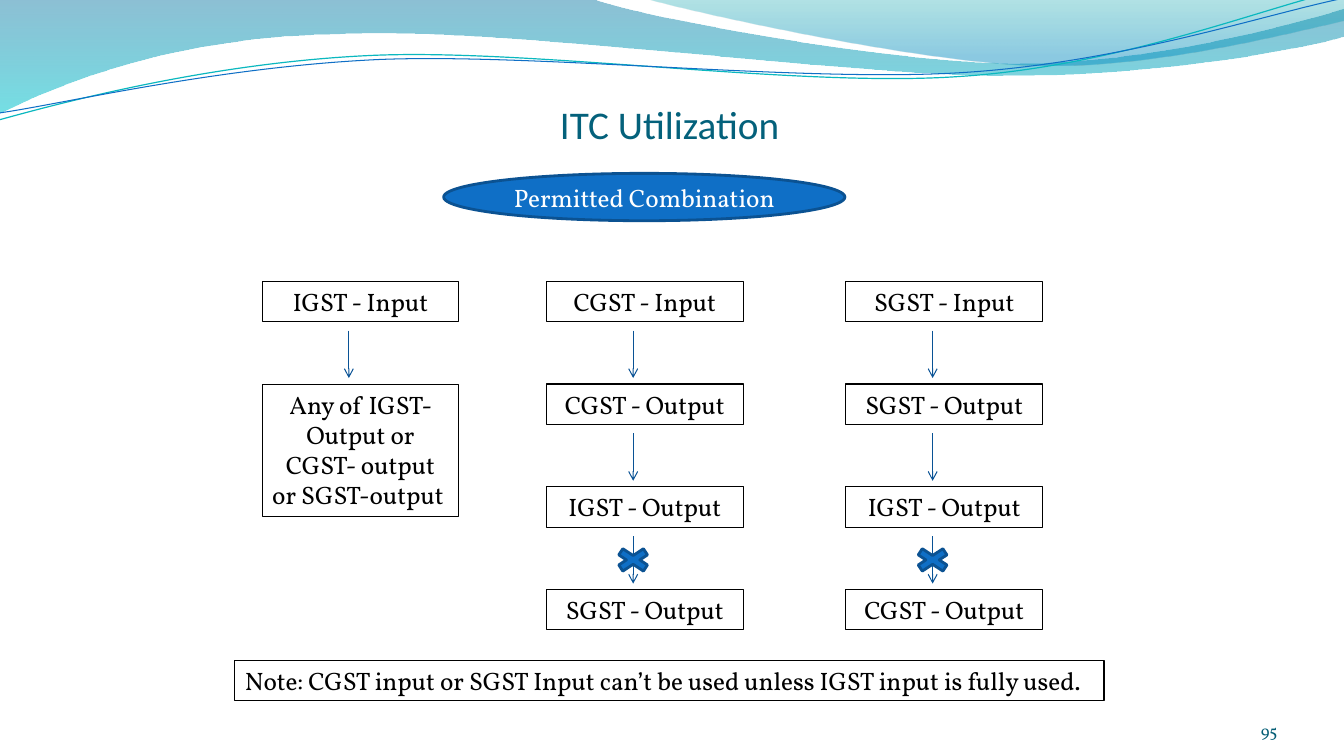
from dataclasses import dataclass
from math import cos, radians, sin

from lxml import etree
from pptx import Presentation
from pptx.dml.color import RGBColor
from pptx.enum import shapes, text
from pptx.oxml.ns import qn
from pptx.util import Inches, Pt

Point = tuple[float, float]
Box = tuple[float, float, float, float]


@dataclass(frozen=True)
class Theme:
    heading_font: str = "Calibri"
    body_font: str = "Vollkorn"
    title_size: int = 28
    body_size: int = 18
    number_size: int = 12
    title: str = "04617B"
    number: str = "045D75"
    ink: str = "000000"
    paper: str = "FFFFFF"
    blue: str = "0F6FC6"
    blue_outline: str = "0B5292"
    arrow: str = "095295"
    teal: str = "0AB8BF"


@dataclass(frozen=True)
class Stop:
    position: float
    color: str
    opacity: int


@dataclass(frozen=True)
class Wave:
    """A chain of segments: one point is a straight line, three a Bezier curve."""
    start: Point
    segments: list[list[Point]]
    stops: tuple[Stop, ...] = ()
    line_color: str = ""
    line_width: float = 0
    rotation: float = 0
    center: Point = (0, 0)


@dataclass(frozen=True)
class Chain:
    """A column of linked boxes; the last link may be crossed out."""
    left: float
    labels: list[str]
    last_height: float = 0.4
    last_forbidden: bool = False


THEME = Theme()
BOX_WIDTH, BOX_HEIGHT = 1.95, 0.4
FIRST_ROW, ROW_PITCH = 2.79, 1.02
ARROW_X, ARROW_Y, ARROW_LENGTH = 0.86, 0.49, 0.47
CROSS_WIDTH, CROSS_HEIGHT = 0.47, 0.31

WAVES = [
    Wave((0, 0), [
        [(5.87, -0.01)],
        [(6.34, 0.17), (8.85, 0.63), (10.11, 0.63)],
        [(11.38, 0.63), (12.78, 0.26), (13.33, 0.09)],
        [(13.35, 0.36)],
        [(13.11, 0.44), (11.6, 0.76), (9.94, 0.75)],
        [(8.29, 0.75), (5.09, 0.28), (3.43, 0.34)],
        [(1.72, 0.36), (0.61, 0.83), (-0.01, 1.13)],
        [(0, 0)],
    ], stops=(Stop(0, "0074A1", 45), Stop(1, "00C6CF", 55))),
    Wave((6.39, -0.01), [
        [(6.79, 0.11), (9.09, 0.62), (10.25, 0.65)],
        [(11.41, 0.69), (12.82, 0.32), (13.33, 0.21)],
        [(13.33, 0)],
        [(6.39, -0.01)],
    ], stops=(Stop(0, "00A1A9", 30), Stop(0.8, "008BBF", 45))),
    Wave((-0.01, 1.19), [
        [(0.64, 1.01), (2.11, 0.62), (3.69, 0.55)],
        [(5.27, 0.48), (7.9, 0.87), (9.5, 0.76)],
        [(11.1, 0.66), (12.52, 0.08), (13.31, -0.1)],
    ], line_color=THEME.teal, line_width=0.85, rotation=-2.7, center=(6.65, 0.57)),
    Wave((0, 1.12), [
        [(0.63, 1.03), (2.18, 0.66), (3.78, 0.59)],
        [(5.37, 0.53), (7.96, 0.82), (9.55, 0.72)],
        [(11.15, 0.62), (12.55, 0.14), (13.34, -0.02)],
    ], line_color=THEME.blue, line_width=0.75, rotation=-2.7, center=(6.67, 0.59)),
]

CHAINS = [
    Chain(2.6, ["IGST - Input", "Any of IGST- Output or CGST- output or SGST-output "],
          last_height=1.31),
    Chain(5.42, ["CGST - Input", "CGST - Output", "IGST - Output", "SGST - Output"],
          last_forbidden=True),
    Chain(8.39, ["SGST - Input", "SGST - Output", "IGST - Output", "CGST - Output"],
          last_forbidden=True),
]


def rgb(color: str) -> RGBColor:
    return RGBColor.from_string(color)


def set_line(shape, color: str, width: float) -> None:
    shape.line.color.rgb = rgb(color)
    shape.line.width = Pt(width)


def write(shape, words: str, size: int, color: str, font: str = THEME.body_font,
          align=text.PP_ALIGN.CENTER, anchor=text.MSO_ANCHOR.TOP) -> None:
    frame = shape.text_frame
    frame.text = words
    frame.word_wrap = True
    frame.vertical_anchor = anchor
    paragraph = frame.paragraphs[0]
    paragraph.alignment = align
    run_font = paragraph.runs[0].font
    run_font.name, run_font.size, run_font.color.rgb = font, Pt(size), rgb(color)


def set_margins(shape, top: float) -> None:
    frame = shape.text_frame
    frame.margin_left = frame.margin_right = frame.margin_bottom = 0
    frame.margin_top = Inches(top)


def unrotate(point: Point, wave: Wave) -> tuple[int, int]:
    """Place of a point, in EMU, before the wave's own rotation is applied."""
    angle = radians(-wave.rotation)
    center_x, center_y = wave.center
    x, y = point[0] - center_x, point[1] - center_y
    return (Inches(center_x + x * cos(angle) - y * sin(angle)),
            Inches(center_y + x * sin(angle) + y * cos(angle)))


def bend_segments(shape, segments: list[list[Point]]) -> None:
    """Join each run of three straight steps into the Bezier curve it outlines."""
    steps = iter(list(shape.element.iter(qn("a:lnTo"))))
    for segment in segments:
        first = next(steps)
        if len(segment) == 3:
            first.tag_name = None
            curve = etree.Element(qn("a:cubicBezTo"))
            first.addprevious(curve)
            for step in (first, next(steps), next(steps)):
                curve.append(step[0])
                step.getparent().remove(step)


def draw_wave(slide, wave: Wave) -> None:
    builder = slide.shapes.build_freeform(*unrotate(wave.start, wave))
    points = [unrotate(point, wave) for segment in wave.segments for point in segment]
    builder.add_line_segments(points, close=bool(wave.stops))
    shape = builder.convert_to_shape()
    bend_segments(shape, wave.segments)
    shape.rotation = wave.rotation
    shape.shadow.inherit = False
    if not wave.stops:
        shape.fill.background()
        set_line(shape, wave.line_color, wave.line_width)
        return
    shape.line.fill.background()
    shape.fill.gradient()
    shape.fill.gradient_angle = 270
    for gradient_stop, stop in zip(shape.fill.gradient_stops, wave.stops):
        gradient_stop.position = stop.position
        gradient_stop.color.rgb = rgb(stop.color)
    colors = shape.element.spPr.iter(qn("a:srgbClr"))
    for color, stop in zip(list(colors), wave.stops):
        etree.SubElement(color, qn("a:alpha"), val=str(stop.opacity * 1000))


def draw_box(slide, box: Box, words: str, align=text.PP_ALIGN.CENTER) -> None:
    shape = slide.shapes.add_textbox(*map(Inches, box))
    write(shape, words, THEME.body_size, THEME.ink, align=align)
    shape.text_frame.auto_size = text.MSO_AUTO_SIZE.SHAPE_TO_FIT_TEXT
    set_line(shape, THEME.ink, 0.75)


def draw_blue_shape(slide, kind: shapes.MSO_SHAPE, box: Box):
    shape = slide.shapes.add_shape(kind, *map(Inches, box))
    shape.shadow.inherit = False
    shape.fill.solid()
    shape.fill.fore_color.rgb = rgb(THEME.blue)
    set_line(shape, THEME.blue_outline, 2)
    return shape


def draw_arrow(slide, x: float, top: float) -> None:
    arrow = slide.shapes.add_connector(shapes.MSO_CONNECTOR.STRAIGHT, Inches(x), Inches(top),
                                       Inches(x), Inches(top + ARROW_LENGTH))
    set_line(arrow, THEME.arrow, 0.75)
    etree.SubElement(arrow.element.spPr.find(qn("a:ln")), qn("a:tailEnd"), type="arrow")
    etree.SubElement(arrow.element.spPr, qn("a:effectLst"))


def draw_chain(slide, chain: Chain) -> None:
    last = len(chain.labels) - 1
    arrow_x = chain.left + ARROW_X
    for row, label in enumerate(chain.labels):
        top = FIRST_ROW + row * ROW_PITCH
        height = chain.last_height if row == last else BOX_HEIGHT
        draw_box(slide, (chain.left, top, BOX_WIDTH, height), label)
        if row < last:
            draw_arrow(slide, arrow_x, top + ARROW_Y)
    if chain.last_forbidden:
        cross_top = FIRST_ROW + (last - 1) * ROW_PITCH + ARROW_Y + (ARROW_LENGTH - CROSS_HEIGHT) / 2
        draw_blue_shape(slide, shapes.MSO_SHAPE.MATH_MULTIPLY,
                        (arrow_x - CROSS_WIDTH / 2, cross_top, CROSS_WIDTH, CROSS_HEIGHT))


def main() -> None:
    presentation = Presentation()
    presentation.slide_width, presentation.slide_height = Inches(13.33), Inches(7.5)
    slide = presentation.slides.add_slide(presentation.slide_layouts[5])
    for wave in WAVES:
        draw_wave(slide, wave)

    title = slide.shapes.title
    title.left, title.top, title.width, title.height = map(Inches, (0.64, 0.21, 12, 1.25))
    write(title, "ITC Utilization", THEME.title_size, THEME.title, THEME.heading_font,
          anchor=text.MSO_ANCHOR.BOTTOM)
    set_margins(title, 0.05)

    heading = draw_blue_shape(slide, shapes.MSO_SHAPE.OVAL, (4.4, 1.72, 3.98, 0.47))
    write(heading, "Permitted Combination", THEME.body_size, THEME.paper,
          anchor=text.MSO_ANCHOR.MIDDLE)
    for chain in CHAINS:
        draw_chain(slide, chain)
    draw_box(slide, (2.33, 6.55, 8.62, BOX_HEIGHT),
             "Note: CGST input or SGST Input can’t be used unless IGST input is fully used.",
             text.PP_ALIGN.LEFT)

    number = slide.shapes.add_textbox(*map(Inches, (11.56, 6.95, 1.11, 0.4)))
    write(number, "95", THEME.number_size, THEME.number, align=text.PP_ALIGN.RIGHT,
          anchor=text.MSO_ANCHOR.BOTTOM)
    set_margins(number, 0)
    presentation.save("out.pptx")


if __name__ == "__main__":
    main()
